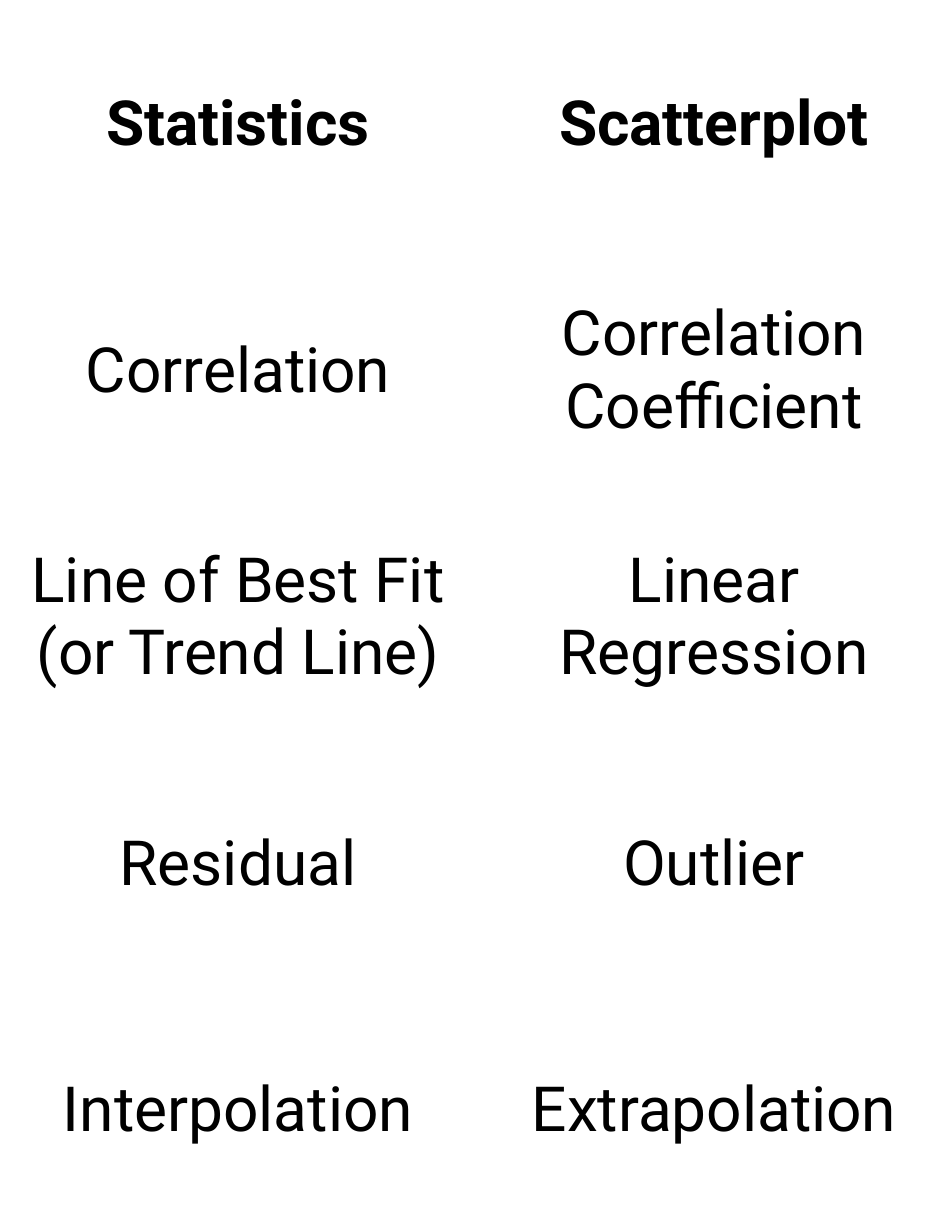
import pptx
from pptx.dml.color import RGBColor
from pptx.enum.text import MSO_ANCHOR, PP_ALIGN
from pptx.util import Cm, Pt

COLORS = {"text": "000000", "paper": "FFFFFF"}
WIDTH, HEIGHT = 21.59, 27.94
TERMS = [
    ("Statistics", "Scatterplot"),
    ("Correlation", "Correlation Coefficient"),
    ("Line of Best Fit\n(or Trend Line)", "Linear Regression"),
    ("Residual", "Outlier"),
    ("Interpolation", "Extrapolation"),
]


def write(tf, text, size=40, bold=False, color="text", font="Roboto"):
    """Fill a text frame with centred text, one paragraph per line."""
    tf.text = text
    for p in tf.paragraphs:
        p.alignment = PP_ALIGN.CENTER
        for r in p.runs:
            r.font.name = font
            r.font.size = Pt(size)
            r.font.bold = bold
            r.font.color.rgb = RGBColor.from_string(COLORS[color])


def add_term_cards(s, left, top, width, height):
    """Divide the box into an even grid of vocabulary cards."""
    rows, cols = len(TERMS), len(TERMS[0])
    table = s.shapes.add_table(
        rows, cols, Cm(left), Cm(top), Cm(width), Cm(height)).table
    table.first_row = table.horz_banding = False
    for column in table.columns:
        column.width = Cm(width / cols)
    for i, terms in enumerate(TERMS):
        table.rows[i].height = Cm(height / rows)
        for j, term in enumerate(terms):
            cell = table.cell(i, j)
            cell.fill.solid()
            cell.fill.fore_color.rgb = RGBColor.from_string(COLORS["paper"])
            cell.vertical_anchor = MSO_ANCHOR.MIDDLE
            write(cell.text_frame, term, bold=i == 0)


def main():
    prs = pptx.Presentation()
    prs.slide_width, prs.slide_height = Cm(WIDTH), Cm(HEIGHT)
    s = prs.slides.add_slide(prs.slide_layouts[6])
    add_term_cards(s, 0, 0.03, WIDTH, HEIGHT)
    prs.save("out.pptx")


if __name__ == "__main__":
    main()
